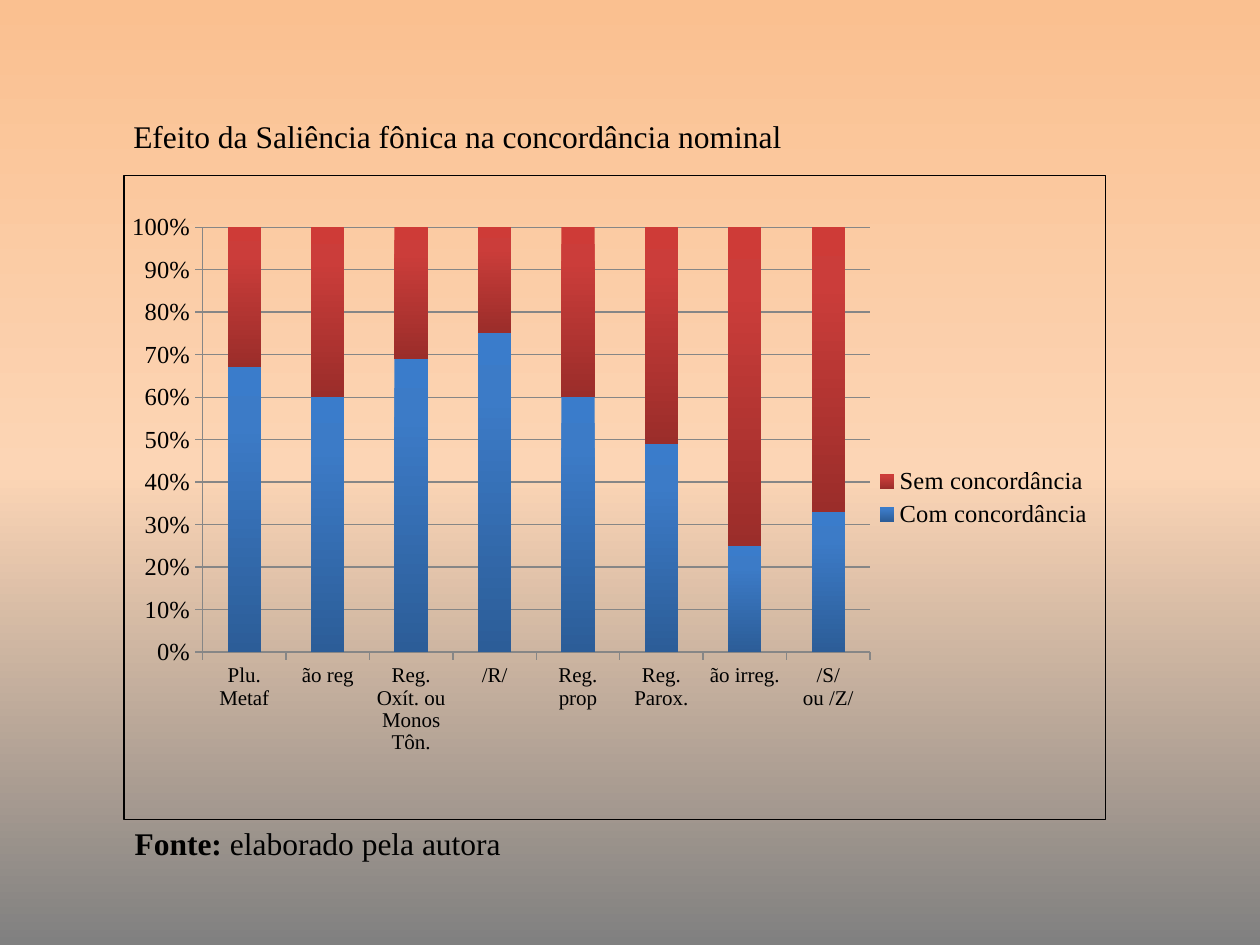
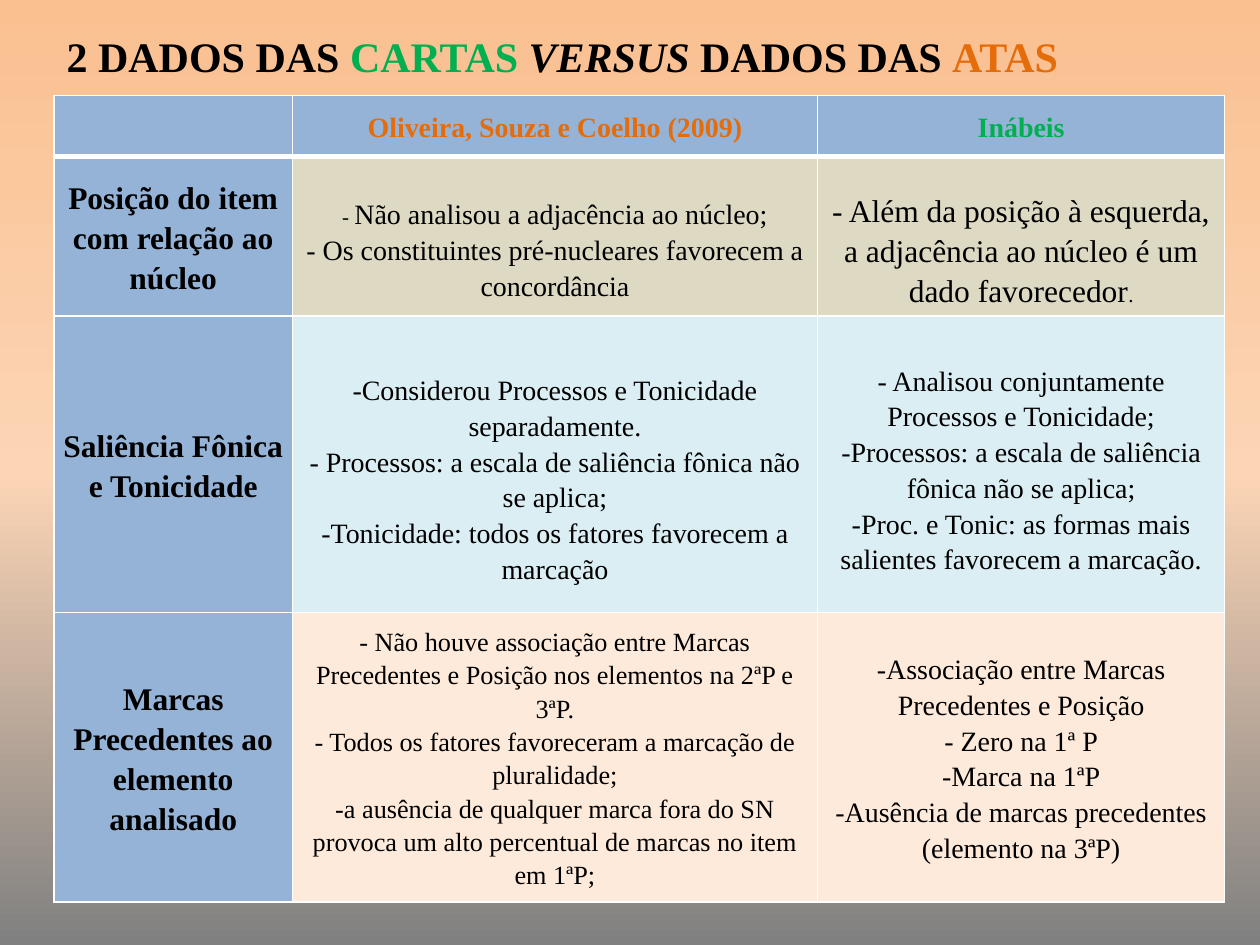
from copy import deepcopy
from dataclasses import dataclass

from lxml import etree
from pptx import Presentation, util as u
from pptx.chart.data import CategoryChartData
from pptx.dml.color import RGBColor
from pptx.enum import chart as ch, text
from pptx.oxml import parse_xml
from pptx.oxml.ns import nsdecls, qn

SLIDE_W, SLIDE_H = u.Inches(10), u.Inches(7.5)
GRID = 100  # columns and rows per slide


@dataclass(frozen=True)
class Theme:
    font: str = "Times New Roman"
    ink: str = "000000"
    green: str = "00B050"
    orange: str = "E46C0A"
    white: str = "FFFFFF"
    grid: str = "868686"
    head: str = "95B3D7"
    bands: tuple = ("DDD9C3", "DBEEF4", "FDEADA")
    background: tuple = ((0, "FAC090"), (50, "FCD5B5"), (100, "808080"))
    blue_bar: tuple = ((0, "3A7CCB"), (20, "3C7BC7"), (100, "2C5D98"))
    red_bar: tuple = ((0, "CE3B37"), (20, "CB3D3A"), (100, "9B2D2A"))
    title: int = 24
    body: int = 18
    cell: int = 16
    dense: int = 15
    axis: int = 14
    small: int = 12
    line_spacing: float = 1.15


T = Theme()


@dataclass(frozen=True)
class Box:
    """A region in grid columns (x, w) and rows (y, h)."""
    x: float
    y: float
    w: float
    h: float

    def emu(self):
        col, row = SLIDE_W / GRID, SLIDE_H / GRID
        return [u.Emu(round(n * s)) for n, s in
                ((self.x, col), (self.y, row), (self.w, col), (self.h, row))]


@dataclass(frozen=True)
class Run:
    text: str
    size: int = T.cell
    color: str = T.ink
    bold: bool = False
    italic: bool = False


def rgb(value):
    return RGBColor.from_string(value)


def style_font(font, size, color=T.ink, bold=False, italic=False):
    font.name, font.size = T.font, u.Pt(size)
    font.bold, font.italic = bold, italic
    font.color.rgb = rgb(color)


def write(p, runs, align, spacing=None):
    p.alignment, p.line_spacing = align, spacing
    for run in runs:
        r = p.add_run()
        r.text = run.text
        style_font(r.font, run.size, run.color, run.bold, run.italic)


def top_down_gradient(fill, owner, stops):
    fill.gradient()
    fill.gradient_angle = 270
    gs_lst = next(owner.iter(qn("a:gsLst")))
    gs_lst.insert(1, deepcopy(gs_lst[0]))
    for stop, (position, color) in zip(fill.gradient_stops, stops):
        stop.position = position / 100
        stop.color.rgb = rgb(color)


def add_text(slide, box, runs, anchor, align):
    tf = slide.shapes.add_textbox(*box.emu()).text_frame
    tf.word_wrap, tf.vertical_anchor = True, anchor
    write(tf.paragraphs[0], runs, align)


def add_title(slide, box, runs):
    add_text(slide, box, runs, text.MSO_ANCHOR.MIDDLE, text.PP_ALIGN.JUSTIFY)


def frame_chart(chart, plot_box):
    """Outline the chart, leave it unfilled and fix its inner plot area."""
    chart_space = chart.element
    chart_space.find(qn("c:chart")).addnext(parse_xml(
        f'<c:spPr {nsdecls("c", "a")}><a:noFill/><a:ln w="9525"><a:solidFill>'
        f'<a:srgbClr val="{T.ink}"/></a:solidFill></a:ln></c:spPr>'))
    plot_area = next(chart_space.iter(qn("c:plotArea")))
    for old in plot_area.findall(qn("c:layout")):
        plot_area.remove(old)
    layout = parse_xml(f'<c:layout {nsdecls("c")}><c:manualLayout/></c:layout>')
    settings = [("layoutTarget", "inner"), ("xMode", "edge"), ("yMode", "edge"),
                *zip("xywh", plot_box)]
    for tag, value in settings:
        etree.SubElement(layout[0], qn(f"c:{tag}")).set("val", str(value))
    plot_area.insert(0, layout)
    plot_area.append(parse_xml(
        f'<c:spPr {nsdecls("c", "a")}><a:noFill/></c:spPr>'))


def add_agreement_chart(slide, box):
    data = CategoryChartData()
    data.categories = ["Plu. Metaf", "ão reg", "Reg. Oxít. ou Monos Tôn.", "/R/",
                       "Reg. prop", "Reg. Parox.", "ão irreg.", "/S/ ou /Z/"]
    with_agreement = [67, 60, 69, 75, 60, 49, 25, 33]
    data.add_series("Com concordância", with_agreement)
    data.add_series("Sem concordância", [100 - v for v in with_agreement])
    chart = slide.shapes.add_chart(
        ch.XL_CHART_TYPE.COLUMN_STACKED_100, *box.emu(), data).chart
    chart.has_title = False
    style_font(chart.font, T.small)

    chart.has_legend = True
    chart.legend.position = ch.XL_LEGEND_POSITION.RIGHT
    chart.legend.include_in_layout = False
    style_font(chart.legend.font, T.axis)

    for axis, size in ((chart.category_axis, T.small), (chart.value_axis, T.axis)):
        style_font(axis.tick_labels.font, size)
        axis.major_tick_mark = ch.XL_TICK_MARK.OUTSIDE
        axis.format.line.color.rgb = rgb(T.grid)
    value_axis = chart.value_axis
    value_axis.has_major_gridlines = True
    value_axis.major_gridlines.format.line.color.rgb = rgb(T.grid)
    value_axis.tick_labels.number_format = "0%"
    value_axis.tick_labels.number_format_is_linked = False

    plot = chart.plots[0]
    plot.gap_width, plot.overlap, plot.vary_by_categories = 150, 100, False
    for series, stops in zip(plot.series, (T.blue_bar, T.red_bar)):
        top_down_gradient(series.format.fill, series.format.element
                          if hasattr(series.format, "element")
                          else series._element, stops)
    frame_chart(chart, (0.08, 0.08, 0.68, 0.66))


def set_borders(cell, **widths):
    tc_pr = cell._tc.get_or_add_tcPr()
    for i, side in enumerate("LRTB"):
        width = u.Pt(widths.get(side, 1))
        tc_pr.insert(i, parse_xml(
            f'<a:ln{side} {nsdecls("a")} w="{width}"><a:solidFill>'
            f'<a:srgbClr val="{T.white}"/></a:solidFill></a:ln{side}>'))


def fill_cell(cell, paragraphs, color, top=0, bottom=0):
    cell.fill.solid()
    cell.fill.fore_color.rgb = rgb(color)
    cell.vertical_anchor = text.MSO_ANCHOR.MIDDLE
    cell.margin_left = cell.margin_right = u.Inches(0.07)
    cell.margin_top, cell.margin_bottom = u.Inches(top), u.Inches(bottom)
    tf = cell.text_frame
    for i, runs in enumerate(paragraphs):
        p = tf.add_paragraph() if i else tf.paragraphs[0]
        write(p, runs, text.PP_ALIGN.CENTER, T.line_spacing)


def lines(*texts, size=T.cell):
    return [[Run(t, size)] for t in texts]


def heading(label, size=T.body, color=T.ink):
    return [[Run(label, size, color, bold=True)]]


COMPARISON = [
    [[], heading("Oliveira, Souza e Coelho (2009)", T.cell, T.orange),
     heading("Inábeis", T.cell, T.green)],
    [heading("Posição do item com relação ao núcleo"),
     [[Run("- ", T.small), Run("Não analisou a adjacência ao núcleo;")],
      [Run("- Os constituintes pré-nucleares favorecem a concordância")]],
     [[Run("- Além da posição à esquerda, a adjacência ao núcleo é um dado "
           "favorecedor", T.body), Run(".", T.small)]]],
    [heading("Saliência Fônica e Tonicidade"),
     lines("-Considerou Processos e Tonicidade separadamente.",
           "- Processos: a escala de saliência fônica não se aplica;",
           "-Tonicidade: todos os fatores favorecem a marcação"),
     lines("- Analisou conjuntamente Processos e Tonicidade;",
           "-Processos: a escala de saliência fônica não se aplica;",
           "-Proc. e Tonic: as formas mais salientes favorecem a marcação.")],
    [heading("Marcas Precedentes ao elemento analisado"),
     lines("- Não houve associação entre Marcas Precedentes e Posição nos "
           "elementos na 2ªP e 3ªP.",
           "- Todos os fatores favoreceram a marcação de pluralidade;",
           "-a ausência de qualquer marca fora do SN provoca um alto percentual "
           "de marcas no item em 1ªP;", size=T.dense),
     lines("-Associação entre Marcas Precedentes e Posição", "- Zero na 1ª P",
           "-Marca na 1ªP", "-Ausência de marcas precedentes (elemento na 3ªP)")],
]
# Extra top and bottom space, in inches, by (row, column)
CELL_PADDING = {(1, 1): (0.2, 0), (1, 2): (0.2, 0),
                (2, 1): (0.22, 0), (2, 2): (0.29, 0.22)}


def split(tracks, total, weights):
    for track, weight, name in zip(tracks, weights, [None] * len(weights)):
        yield track, round(total * weight / sum(weights))


def add_comparison_table(slide, box):
    x, y, w, h = box.emu()
    table = slide.shapes.add_table(
        len(COMPARISON), len(COMPARISON[0]), x, y, w, h).table
    table.first_row = table.horz_banding = False
    for column, width in split(table.columns, w, (1.89, 4.17, 3.23)):
        column.width = width
    for row, height in split(table.rows, h, (0.48, 1.27, 2.35, 2.28)):
        row.height = height
    for i, row in enumerate(COMPARISON):
        for j, paragraphs in enumerate(row):
            cell = table.cell(i, j)
            color = T.bands[i - 1] if i and j else T.head
            fill_cell(cell, paragraphs, color, *CELL_PADDING.get((i, j), (0, 0)))
            set_borders(cell, T=3 if i == 1 else 1, B=1 if i else 3)


def chart_slide(slide):
    add_title(slide, Box(9.6, 6, 90, 16.67),
              [Run("Efeito da Saliência fônica na concordância nominal", T.body)])
    add_agreement_chart(slide, Box(9.8, 18.53, 78, 68.27))
    add_text(slide, Box(9.7, 86.53, 90, 7.2),
             [Run("Fonte: ", T.body, bold=True),
              Run("elaborado pela autora", T.body)],
             text.MSO_ANCHOR.TOP, text.PP_ALIGN.LEFT)


def table_slide(slide):
    parts = (("2 DADOS DAS ", T.ink, False), ("CARTAS ", T.green, False),
             ("VERSUS", T.ink, True), (" DADOS DAS ", T.ink, False),
             ("ATAS", T.orange, False))
    add_title(slide, Box(4.3, 0, 90, 11.87),
              [Run(t, T.title, color, True, italic) for t, color, italic in parts])
    add_comparison_table(slide, Box(4.3, 10.13, 92.9, 85.07))


def main():
    prs = Presentation()
    prs.slide_width, prs.slide_height = SLIDE_W, SLIDE_H
    master = prs.slide_master
    top_down_gradient(master.background.fill, master.element, T.background)
    for build in (chart_slide, table_slide):
        build(prs.slides.add_slide(prs.slide_layouts[6]))
    prs.save("out.pptx")


if __name__ == "__main__":
    main()
